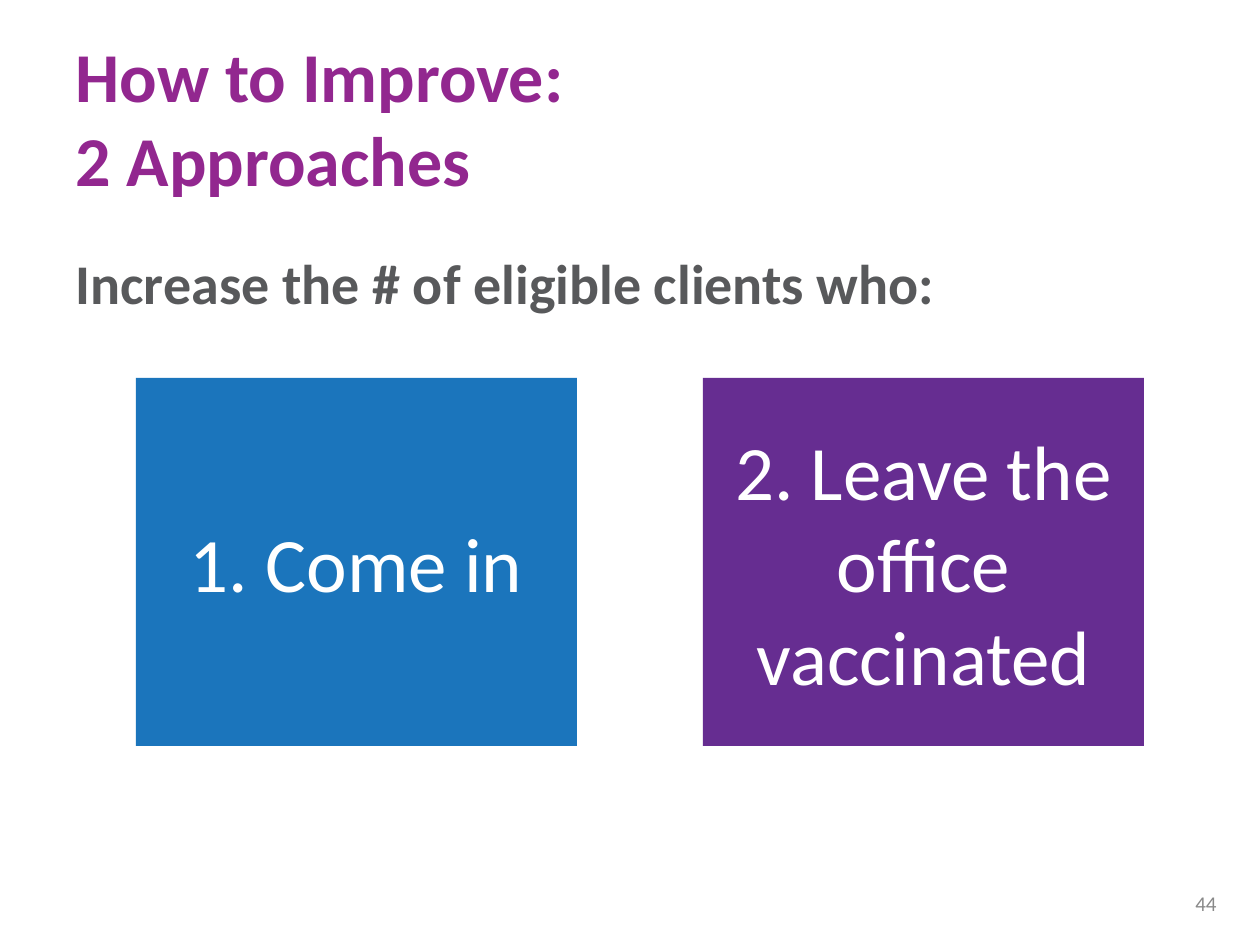
from dataclasses import dataclass

from pptx import Presentation
from pptx import util as u
from pptx.dml.color import RGBColor
from pptx.enum import shapes, text
from pptx.oxml.ns import qn

PX = 914400 / 126


@dataclass(frozen=True)
class Theme:
    """Colours, font and type sizes of the slide."""
    font: str = "Calibri"
    title: str = "92278F"
    lead: str = "58595B"
    number: str = "898989"
    card_text: str = "FFFFFF"
    card_fills: tuple = ("1B75BC", "662D91")
    title_size: int = 40
    lead_size: int = 32
    card_size: int = 44
    number_size: int = 12


THEME = Theme()


def emu(box):
    """Turn a box in px into whole EMU."""
    return [u.Emu(round(v * PX)) for v in box]


def place(sp, box):
    """Move and size a placeholder to a box."""
    sp.left, sp.top, sp.width, sp.height = emu(box)


def add_run(p, words, size, color, bold=False):
    """Append one formatted run to a paragraph."""
    r = p.add_run()
    r.text = words
    r.font.name = THEME.font
    r.font.size = u.Pt(size)
    r.font.bold = bold
    r.font.color.rgb = RGBColor.from_string(color)


def frame(sp, anchor, align):
    """Set wrapping and alignment, and return the first paragraph."""
    tf = sp.text_frame
    tf.word_wrap = True
    tf.auto_size = text.MSO_AUTO_SIZE.NONE
    tf.vertical_anchor = anchor
    p = tf.paragraphs[0]
    p.alignment = align
    return p


def fill_title(s, box, lines):
    """Write the heading, one line per entry."""
    sp = s.shapes.title
    place(sp, box)
    p = frame(sp, text.MSO_ANCHOR.MIDDLE, text.PP_ALIGN.LEFT)
    for i, line in enumerate(lines):
        if i:
            p.add_line_break()
        add_run(p, line, THEME.title_size, THEME.title, True)


def fill_lead(s, box, words):
    """Write the unbulleted lead sentence."""
    sp = s.placeholders[1]
    place(sp, box)
    p = frame(sp, text.MSO_ANCHOR.TOP, text.PP_ALIGN.LEFT)
    pPr = p._p.get_or_add_pPr()
    pPr.set("marL", "0")
    pPr.set("indent", "0")
    pPr.append(pPr.makeelement(qn("a:buNone"), {}))
    p.space_before = u.Pt(0)
    add_run(p, words, THEME.lead_size, THEME.lead, True)


def add_cards(s, box, labels, gap):
    """Share a box between equal cards in a row."""
    left, top, width, height = box
    card_width = (width - gap * (len(labels) - 1)) // len(labels)
    for i, (label, fill) in enumerate(zip(labels, THEME.card_fills)):
        card = (left + i * (card_width + gap), top, card_width, height)
        sp = s.shapes.add_shape(shapes.MSO_SHAPE.RECTANGLE, *emu(card))
        sp.shadow.inherit = False
        sp.fill.solid()
        sp.fill.fore_color.rgb = RGBColor.from_string(fill)
        sp.line.fill.background()
        p = frame(sp, text.MSO_ANCHOR.MIDDLE, text.PP_ALIGN.CENTER)
        add_run(p, label, THEME.card_size, THEME.card_text)


def add_number(s, box, number):
    """Write the slide number."""
    sp = s.shapes.add_textbox(*emu(box))
    p = frame(sp, text.MSO_ANCHOR.MIDDLE, text.PP_ALIGN.LEFT)
    add_run(p, number, THEME.number_size, THEME.number)


def main():
    """Build and save the slide."""
    prs = Presentation()
    prs.slide_width, prs.slide_height = emu((1260, 945))
    s = prs.slides.add_slide(prs.slide_layouts[1])
    fill_title(s, (63, 38, 683, 158), ("How to Improve:", "2 Approaches"))
    fill_lead(s, (63, 242, 1134, 94), "Increase the # of eligible clients who:")
    add_cards(s, (136, 378, 1008, 368),
              ("1. Come in", "2. Leave the office vaccinated"), gap=126)
    add_number(s, (1183, 878, 63, 50), "44")
    prs.save("out.pptx")


if __name__ == "__main__":
    main()
